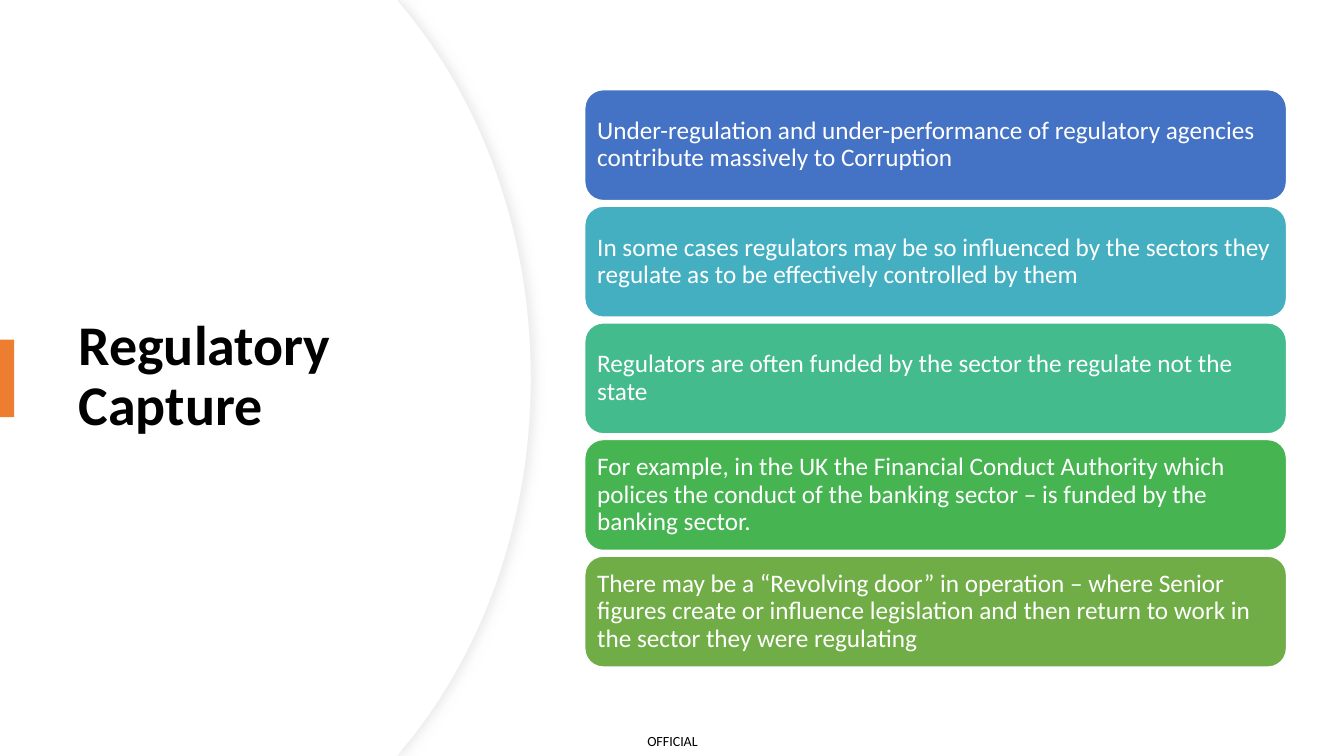
import dataclasses
import lxml.etree
import pptx
import pptx.dml.color
import pptx.enum.shapes
import pptx.enum.text
import pptx.oxml.ns
import pptx.util

Inches = pptx.util.Inches
Pt = pptx.util.Pt
RGB = pptx.dml.color.RGBColor.from_string
Shape = pptx.enum.shapes.MSO_SHAPE
Align = pptx.enum.text.PP_ALIGN
Anchor = pptx.enum.text.MSO_ANCHOR


@dataclasses.dataclass(frozen=True)
class Theme:
    font: str = "Calibri"
    ink: str = "000000"
    white: str = "FFFFFF"
    edge: str = "EFEFEF"
    shade: str = "D9D9D9"
    accent: str = "ED7D31"
    cards: tuple = ("4472C4", "43AFC0", "43BB8D", "45B451", "70AD47")
    title: int = 40
    body: int = 18
    mark: int = 10


THEME = Theme()

POINTS = (
    "Under-regulation and under-performance of regulatory agencies contribute massively to Corruption",
    "In some cases regulators may be so influenced by the sectors they regulate as to be effectively controlled by them",
    "Regulators are often funded by the sector the regulate not the state",
    "For example, in the UK the Financial Conduct Authority which polices the conduct of the banking sector – is funded by the banking sector.",
    "There may be a “Revolving door” in operation – where Senior figures create or influence legislation and then return to work in the sector they were regulating",
)


def write(shape, text, size, color, bold=False, align=Align.LEFT, inset=None, lead=None):
    frame = shape.text_frame
    frame.word_wrap = True
    frame.vertical_anchor = Anchor.MIDDLE
    if inset is not None:
        frame.margin_left = frame.margin_right = Inches(inset)
        frame.margin_top = frame.margin_bottom = Inches(inset)
    para = frame.paragraphs[0]
    para.alignment = align
    para.line_spacing = lead
    run = para.add_run()
    run.text = text
    run.font.name = THEME.font
    run.font.size = Pt(size)
    run.font.bold = bold
    run.font.color.rgb = RGB(color)


def paint(shape, fill, line=None, width=1):
    shape.shadow.inherit = False
    shape.fill.solid()
    shape.fill.fore_color.rgb = RGB(fill)
    if line:
        shape.line.color.rgb = RGB(line)
        shape.line.width = Pt(width)
    else:
        shape.line.fill.background()


def add_box(slide, kind, box, fill, line=None):
    shape = slide.shapes.add_shape(kind, *map(Inches, box))
    paint(shape, fill, line)
    return shape


def bend(a, b, c, d, steps=30):
    """Points along a cubic curve, after its start."""
    for i in range(1, steps + 1):
        t = i / steps
        u = 1 - t
        yield tuple(u**3 * p + 3 * u * u * t * q + 3 * u * t * t * r + t**3 * s
                    for p, q, r, s in zip(a, b, c, d))


def add_panel(slide, right, line=None):
    """White panel whose right side is an arc, mirrored about the middle."""
    high, mid = 7.5, 3.75
    start = (right - 1.26, 0.08)
    upper = [(3.94, 0), start]
    upper += bend(start, (right - 0.48, 1.02), (right, 2.32), (right, mid))
    lower = [(x, high - y) for x, y in reversed(upper[:-1])]
    outline = upper + lower + [(0, high)]
    pen = slide.shapes.build_freeform(0, 0, scale=1.0)
    pen.add_line_segments([(Inches(x), Inches(y)) for x, y in outline], close=True)
    panel = pen.convert_to_shape()
    paint(panel, THEME.white, line, 0.75)
    return panel


def add_shade(shape):
    qn = pptx.oxml.ns.qn
    effects = shape.element.spPr.find(qn("a:effectLst"))
    outer = lxml.etree.SubElement(effects, qn("a:outerShdw"), blurRad=str(Pt(7)),
                                  dist=str(Pt(3)), dir="0", algn="l", rotWithShape="0")
    color = lxml.etree.SubElement(outer, qn("a:srgbClr"), val=THEME.shade)
    lxml.etree.SubElement(color, qn("a:alpha"), val="50000")


def add_title(slide, text, box):
    title = slide.shapes.title
    title.left, title.top, title.width, title.height = map(Inches, box)
    write(title, text, THEME.title, THEME.ink, bold=True, lead=0.9)
    # Bring the title in front of the panels
    title.element.getparent().append(title.element)


def add_cards(slide, left, top, width, height, pitch):
    for i, (text, fill) in enumerate(zip(POINTS, THEME.cards)):
        box = (left, top + i * pitch, width, height)
        card = add_box(slide, Shape.ROUNDED_RECTANGLE, box, fill, THEME.white)
        write(card, text, THEME.body, THEME.white, inset=0.07, lead=0.9)


def main():
    deck = pptx.Presentation()
    deck.slide_width, deck.slide_height = Inches(13.33), Inches(7.5)
    slide = deck.slides.add_slide(deck.slide_layouts[5])

    # Marking at the foot
    mark = slide.shapes.add_textbox(*map(Inches, (6.27, 7.21, 0.8, 0.29)))
    write(mark, "OFFICIAL", THEME.mark, THEME.ink, align=Align.CENTER, inset=0)

    # Curved panels, title and accent bar
    add_shade(add_panel(slide, 5.27, THEME.edge))
    add_panel(slide, 5.26)
    add_title(slide, "Regulatory Capture", (0.68, 1.27, 3.94, 4.95))
    add_box(slide, Shape.RECTANGLE, (0, 3.37, 0.14, 0.77), THEME.accent)

    # Stack of cards
    add_cards(slide, 5.8, 0.89, 6.96, 1.1, 1.157)

    deck.save("out.pptx")


if __name__ == "__main__":
    main()
